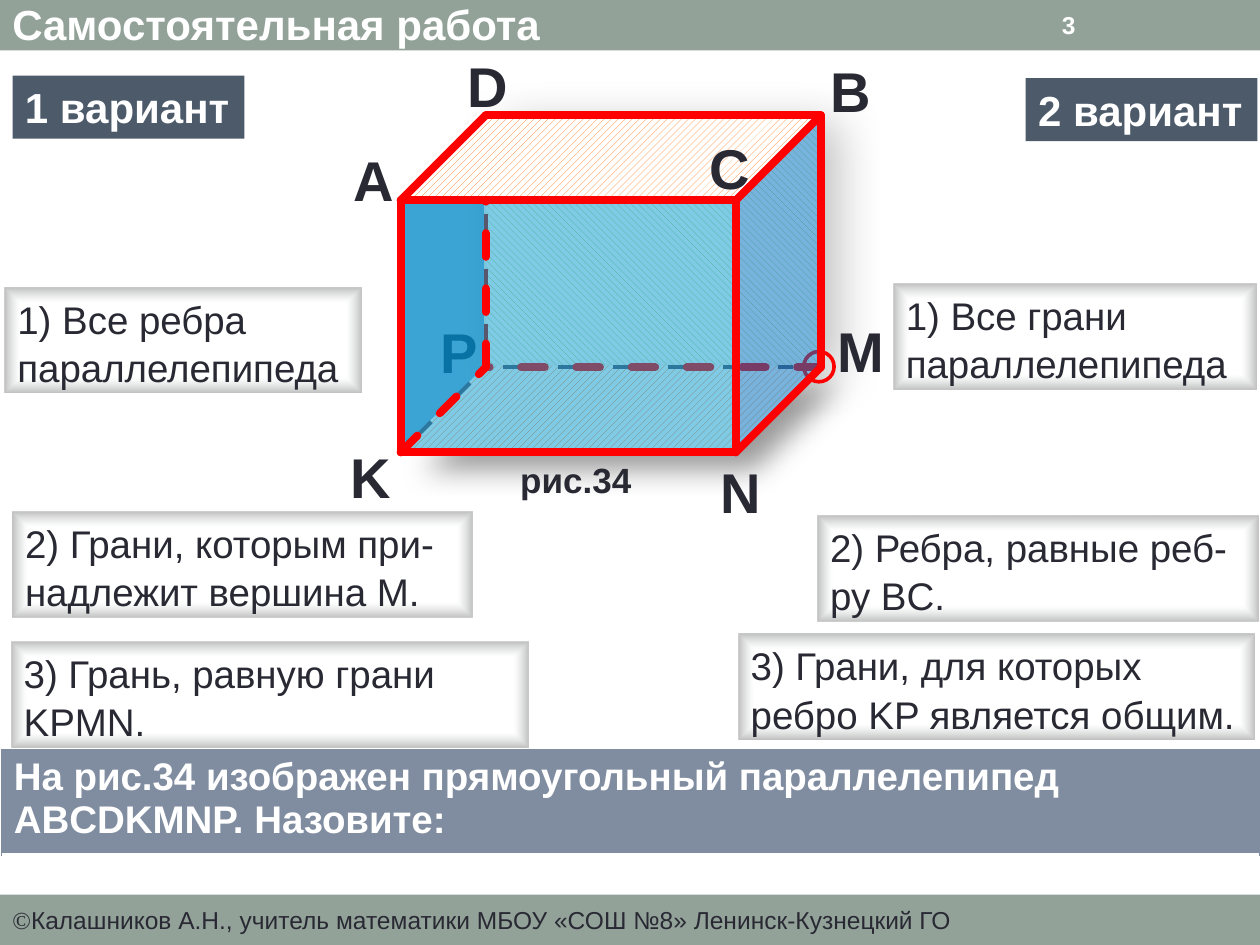
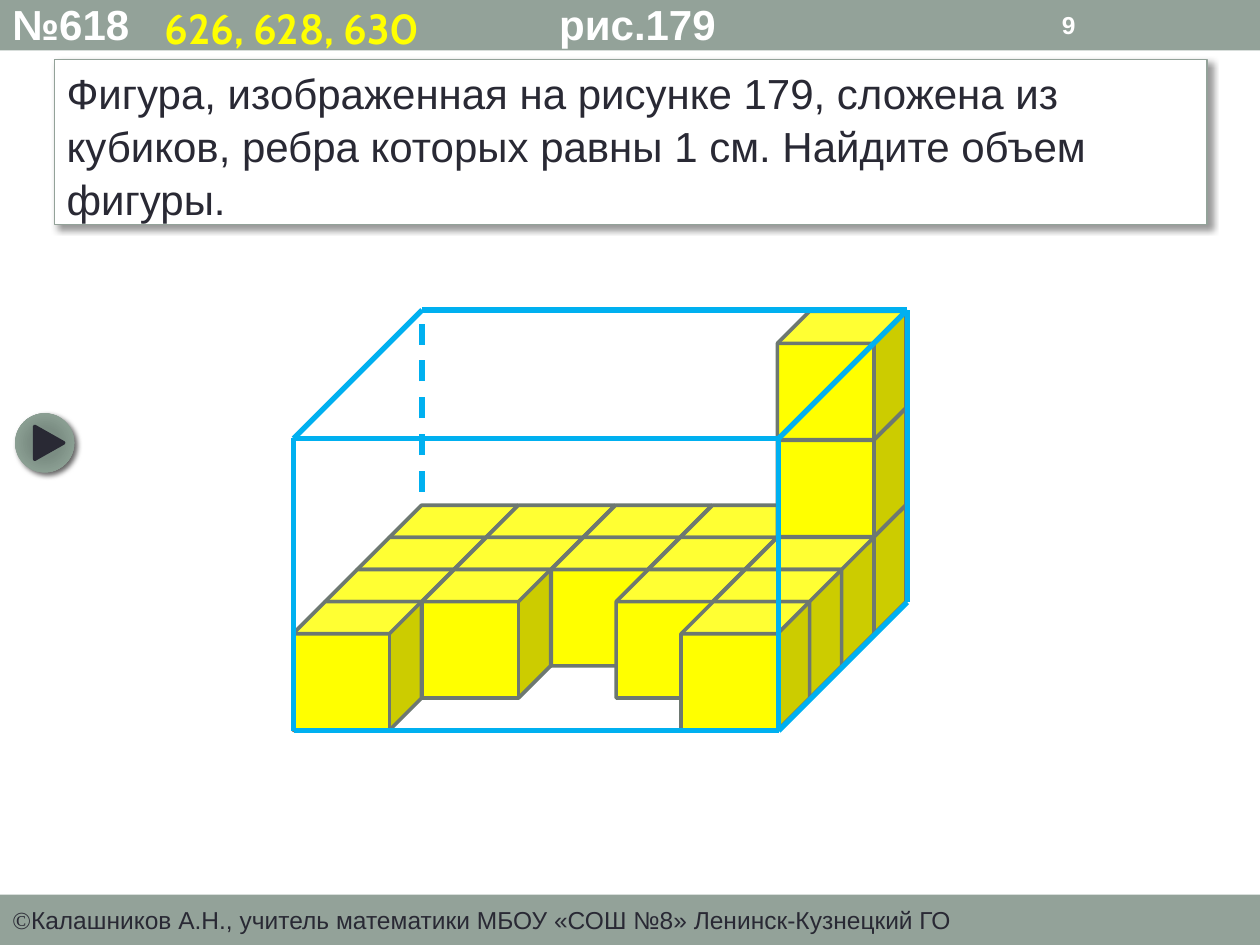
from lxml.etree import SubElement
from pptx import Presentation
from pptx.dml.color import RGBColor
from pptx.enum.dml import MSO_LINE, MSO_PATTERN as Pattern
from pptx.enum.shapes import MSO_CONNECTOR, MSO_SHAPE as Shape
from pptx.enum.text import MSO_ANCHOR as Anchor, PP_ALIGN as Align
from pptx.oxml import parse_xml
from pptx.oxml.ns import nsdecls, qn
from pptx.util import Inches, Pt

# The slide is a grid of 100 columns by 75 rows; all lengths count its cells.
COLUMNS, ROWS = 100, 75
CELL = Inches(0.1)
BAND = 4

SAGE, INK, WHITE = "93A299", "292934", "FFFFFF"
SLATE, STEEL, RED, SKY, YELLOW = "4C5A6A", "808DA0", "FF0000", "00B0F0", "FFFF00"
HIDDEN_GREY, CUBE_LINE = "57576E", "6D7871"
BEVEL = [(0, "BFCAC3", 0), (71, "D6DDD9", 0), (100, "BFBFBF", 100)]
BUTTON = [(0, "7B8E82", 100), (34, "7B8D83", 100), (70, "8A9E92", 100), (100, SAGE, 100)]
OWNER = "Калашников А.Н., учитель математики МБОУ «СОШ №8» Ленинск-Кузнецкий ГО"

HIDDEN_EDGES = ["MP", "PK", "PD"]
VISIBLE_EDGES = ["BD", "AD", "CA", "KA", "CN", "CB", "MB", "NM", "NK"]


def color(hex_code):
    return RGBColor.from_string(hex_code)


def cells(*lengths):
    return [round(length * CELL) for length in lengths]


def add_shape(slide, kind, at, fill=None, line=None, width=2.08, alpha=100):
    shape = slide.shapes.add_shape(kind, *cells(*at))
    shape.shadow.inherit = False
    if fill:
        shape.fill.solid()
        shape.fill.fore_color.rgb = color(fill)
        if alpha < 100:
            tint = shape.fill._xPr.find(qn("a:solidFill"))[0]
            SubElement(tint, qn("a:alpha"), val=str(alpha * 1000))
    else:
        shape.fill.background()
    if line:
        shape.line.color.rgb = color(line)
        shape.line.width = Pt(width)
    else:
        shape.line.fill.background()
    return shape


def set_hatching(shape, pattern, ink):
    shape.fill.patterned()
    shape.fill.pattern = pattern
    shape.fill.fore_color.rgb = color(ink)
    shape.fill.back_color.rgb = color(WHITE)


def set_gradient(shape, stops, path, center):
    """Fill with (position, colour, opacity) stops running out from the center."""
    stop_list = "".join(
        f'<a:gs pos="{place * 1000}"><a:srgbClr val="{tint}">'
        f'<a:alpha val="{opacity * 1000}"/></a:srgbClr></a:gs>'
        for place, tint, opacity in stops)
    sides = " ".join(f'{side}="{center * 1000}"' for side in "ltrb")
    gradient = parse_xml(
        f'<a:gradFill {nsdecls("a")} rotWithShape="1"><a:gsLst>{stop_list}</a:gsLst>'
        f'<a:path path="{path}"><a:fillToRect {sides}/></a:path></a:gradFill>')
    properties = shape._element.spPr
    properties.replace(properties.find(qn("a:noFill")), gradient)


def set_shadow(shape, alpha, blur, distance, angle):
    effects = shape._element.spPr.find(qn("a:effectLst"))
    shadow = SubElement(effects, qn("a:outerShdw"), blurRad=str(Pt(blur)),
                        dist=str(Pt(distance)), dir=str(angle * 60000),
                        algn="tl", rotWithShape="0")
    tint = SubElement(shadow, qn("a:srgbClr"), val="000000")
    SubElement(tint, qn("a:alpha"), val=str(alpha * 1000))


def format_run(span, size, ink, bold=False, name="Arial"):
    span.font.size = Pt(size)
    span.font.color.rgb = color(ink)
    span.font.bold = bold
    span.font.name = name


def write(shape, words, size, ink=INK, bold=False, wrap=True, anchor=Anchor.TOP,
          spacing=None, name="Arial"):
    frame = shape.text_frame
    frame.text = words
    frame.word_wrap = wrap
    frame.vertical_anchor = anchor
    for para in frame.paragraphs:
        para.alignment = Align.LEFT
        if spacing:
            para.line_spacing = spacing
        for span in para.runs:
            format_run(span, size, ink, bold, name)
    return frame


def add_text(slide, words, at, size, **style):
    box = slide.shapes.add_textbox(*cells(*at))
    return write(box, words, size, **style)


def add_line(slide, start, end, ink, width, dashed=False, rounded=False):
    line = slide.shapes.add_connector(MSO_CONNECTOR.STRAIGHT, *cells(*start, *end))
    line.line.color.rgb = color(ink)
    line.line.width = Pt(width)
    if dashed:
        line.line.dash_style = MSO_LINE.DASH
    if rounded:
        line.line._ln.set("cap", "rnd")
    SubElement(line._element.spPr, qn("a:effectLst"))


def prism_corners(left, top, width, height, depth):
    """Corners of a box seen from the front right: ACNK is the front face."""
    right, bottom = left + width, top + height
    front = {"A": (left, top), "C": (right, top), "N": (right, bottom), "K": (left, bottom)}
    back = {twin: (front[corner][0] + depth, front[corner][1] - depth)
            for corner, twin in zip("ACNK", "DBMP")}
    return front | back


def add_edges(slide, corners, edges, ink, width, dashed=False, rounded=False):
    for start, end in edges:
        add_line(slide, corners[start], corners[end], ink, width, dashed, rounded)


def add_page(deck, title, number):
    slide = deck.slides.add_slide(deck.slide_layouts[6])
    add_shape(slide, Shape.RECTANGLE, (0, 0, COLUMNS, BAND), SAGE)
    footer = add_shape(slide, Shape.RECTANGLE, (0, ROWS - BAND, COLUMNS, BAND), SAGE)
    frame = write(footer, "©", 14, anchor=Anchor.MIDDLE, name="Times New Roman")
    owner = frame.paragraphs[0].add_run()
    owner.text = OWNER
    format_run(owner, 14, INK)
    heading = add_text(slide, "", (0, -0.6, COLUMNS, 5), 24)
    para = heading.paragraphs[0]
    tabs = SubElement(para._p.get_or_add_pPr(), qn("a:tabLst"))
    SubElement(tabs, qn("a:tab"), pos=str(cells(43.4)[0]), algn="l")
    span = para.add_run()
    span.text = title
    format_run(span, 24, WHITE, bold=True)
    add_text(slide, number, (83.3, 0.2, 11.7, 3.6), 14, ink=WHITE, bold=True,
             anchor=Anchor.MIDDLE)
    return slide


def add_side_face(slide, left):
    face = add_shape(slide, Shape.PARALLELOGRAM, (left, 19.1, 26.8, 6.8), "0070C0", alpha=53)
    face.adjustments[0] = 0.994
    face.rotation = 90
    face._element.spPr.xfrm.set("flipV", "1")


def add_level_face(slide, top):
    face = add_shape(slide, Shape.PARALLELOGRAM, (31.6, top, 33.5, 6.9))
    face.adjustments[0] = 1.016
    set_hatching(face, Pattern.WIDE_UPWARD_DIAGONAL, "FF7711")


def draw_parallelepiped(slide):
    corners = prism_corners(31.8, 15.9, 26.6, 20, 6.75)

    def add_red_edges(edges, dashed=False, under=HIDDEN_GREY):
        add_edges(slide, corners, edges, under, 2.25, dashed)
        add_edges(slide, corners, edges, RED, 4.5, dashed, rounded=True)

    add_corner_label(slide, "P", 34, 24.7)
    add_side_face(slide, 21.6)
    back = add_shape(slide, Shape.RECTANGLE, (38.6, 9.2, 26.6, 20), WHITE)
    set_shadow(back, 23, 27, 11, 21)
    hatched_back = add_shape(slide, Shape.RECTANGLE, (38.6, 9.1, 26.6, 20))
    set_hatching(hatched_back, Pattern.WIDE_DOWNWARD_DIAGONAL, "92D050")
    base = add_shape(slide, Shape.PARALLELOGRAM, (32.2, 29.1, 32.9, 6.7), WHITE)
    base.adjustments[0] = 1.012
    set_shadow(base, 40, 17, 15, 45)
    add_level_face(slide, 29)
    add_shape(slide, Shape.OVAL, (63.8, 27.9, 2.4, 2.4), line=RED)
    add_red_edges(["MP"], dashed=True)
    add_edges(slide, corners, ["KP"], HIDDEN_GREY, 2.25, dashed=True)
    add_side_face(slide, 48.4)
    add_shape(slide, Shape.RECTANGLE, (31.8, 16, 26.5, 19.9), "0097CC", alpha=50)
    add_red_edges(["PD"], dashed=True)
    add_level_face(slide, 9.1)
    add_red_edges(VISIBLE_EDGES, under=INK)
    add_edges(slide, corners, ["KP"], RED, 4.5, dashed=True, rounded=True)
    for letter, left, top in [("A", 27.1, 11.1), ("B", 64.9, 4), ("C", 55.3, 10.1),
                              ("D", 36.1, 3.6), ("K", 26.8, 34.6), ("M", 65.5, 24.6),
                              ("N", 56.2, 35.8)]:
        add_corner_label(slide, letter, left, top)


def add_corner_label(slide, letter, left, top):
    width = {"M": 5.8, "P": 5}.get(letter, 5.3)
    add_text(slide, letter, (left, top, width, 6.4), 32, bold=True, wrap=False)


def add_variant(slide, words, left, top):
    tag = add_shape(slide, Shape.RECTANGLE, (left, top, 18.4, 5), SLATE)
    write(tag, words, 24, ink=WHITE, bold=True, wrap=False)


def add_task(slide, words, left, top, width):
    card = add_shape(slide, Shape.RECTANGLE, (left, top, width, 8.4))
    set_gradient(card, BEVEL, "rect", 50)
    write(card, words, 22, spacing=1.05)


def add_statement(slide, words):
    table = slide.shapes.add_table(1, 1, *cells(0.1, 59.5, 99.9, 8.3)).table
    cell = table.cell(0, 0)
    cell.text = words
    format_run(cell.text_frame.paragraphs[0].runs[0], 22, WHITE, bold=True)
    cell.fill.solid()
    cell.fill.fore_color.rgb = color(STEEL)
    borders = [("L", STEEL, 0.75), ("R", STEEL, 0.75), ("T", STEEL, 0.75), ("B", WHITE, 2.08)]
    for index, (side, ink, width) in enumerate(borders):
        cell._tc.get_or_add_tcPr().insert(index, parse_xml(
            f'<a:ln{side} {nsdecls("a")} w="{Pt(width)}"><a:solidFill>'
            f'<a:srgbClr val="{ink}"/></a:solidFill></a:ln{side}>'))


def draw_cubes(slide):
    size, step, shift = 10.2, 7.7, 2.55
    full_row = range(5)
    floor = [full_row, full_row, (0, 1, 3, 4), (0, 4)]
    places = [(column, depth, 0) for depth, row in enumerate(floor) for column in row]
    for column, depth, level in places + [(4, 0, 1), (4, 0, 2)]:
        left = 30.9 + column * step - depth * shift
        top = 40.1 + depth * shift - level * step
        add_shape(slide, Shape.CUBE, (left, top, size, size), YELLOW, CUBE_LINE)


def add_play_button(slide):
    disc = add_shape(slide, Shape.OVAL, (1.2, 32.8, 4.7, 4.7))
    set_gradient(disc, BUTTON, "circle", 100)
    set_shadow(disc, 60, 3, 2, 45)
    arrow = add_shape(slide, Shape.ISOSCELES_TRIANGLE, (2.6, 34, 2.6, 2.3), INK, INK)
    arrow.rotation = 90


def build_independent_work(deck):
    slide = add_page(deck, "Самостоятельная работа", "3")
    draw_parallelepiped(slide)
    add_text(slide, "рис.34", (40.3, 35.9, 10.9, 4.4), 20, bold=True, wrap=False)
    add_variant(slide, "1 вариант", 1, 6)
    add_variant(slide, "2 вариант", 81.4, 6.2)
    for task in [("1) Все ребра параллелепипеда", 0.4, 22.8, 28.3),
                 ("1) Все грани параллелепипеда", 70.9, 22.5, 28.8),
                 ("2) Ребра, равные реб-ру BC.", 64.9, 40.9, 35),
                 ("2) Грани, которым при-\nнадлежит вершина M.", 1, 40.6, 36.5),
                 ("3) Грань, равную грани KPMN.", 0.9, 50.9, 41),
                 ("3) Грани, для которых ребро KP является общим.", 58.6, 50.3, 41)]:
        add_task(slide, *task)
    add_statement(slide, "На рис.34 изображен прямоугольный параллелепипед ABCDKMNP. Назовите:")


def build_cube_volume(deck):
    slide = add_page(deck, "№618\tрис.179", "9")
    corners = prism_corners(23.3, 34.8, 38.5, 23.2, 10.2)
    add_edges(slide, corners, HIDDEN_EDGES, SKY, 3, dashed=True)
    draw_cubes(slide)
    add_edges(slide, corners, VISIBLE_EDGES, SKY, 3)
    add_play_button(slide)
    add_text(slide, "626, 628, 630", (12.1, -0.3, 30, 5), 24, ink=YELLOW, bold=True, name="Cabin")
    card = add_shape(slide, Shape.RECTANGLE, (4.3, 4.7, 91.5, 13.1), WHITE, SAGE, 0.75)
    set_shadow(card, 40, 4, 3, 45)
    write(card, "Фигура, изображенная на рисунке 179, сложена из кубиков, ребра которых "
                "равны 1 см. Найдите объем фигуры.", 24, spacing=1.05)


def main():
    deck = Presentation()
    deck.slide_width, deck.slide_height = cells(COLUMNS, ROWS)
    build_independent_work(deck)
    build_cube_volume(deck)
    deck.save("out.pptx")


if __name__ == "__main__":
    main()
